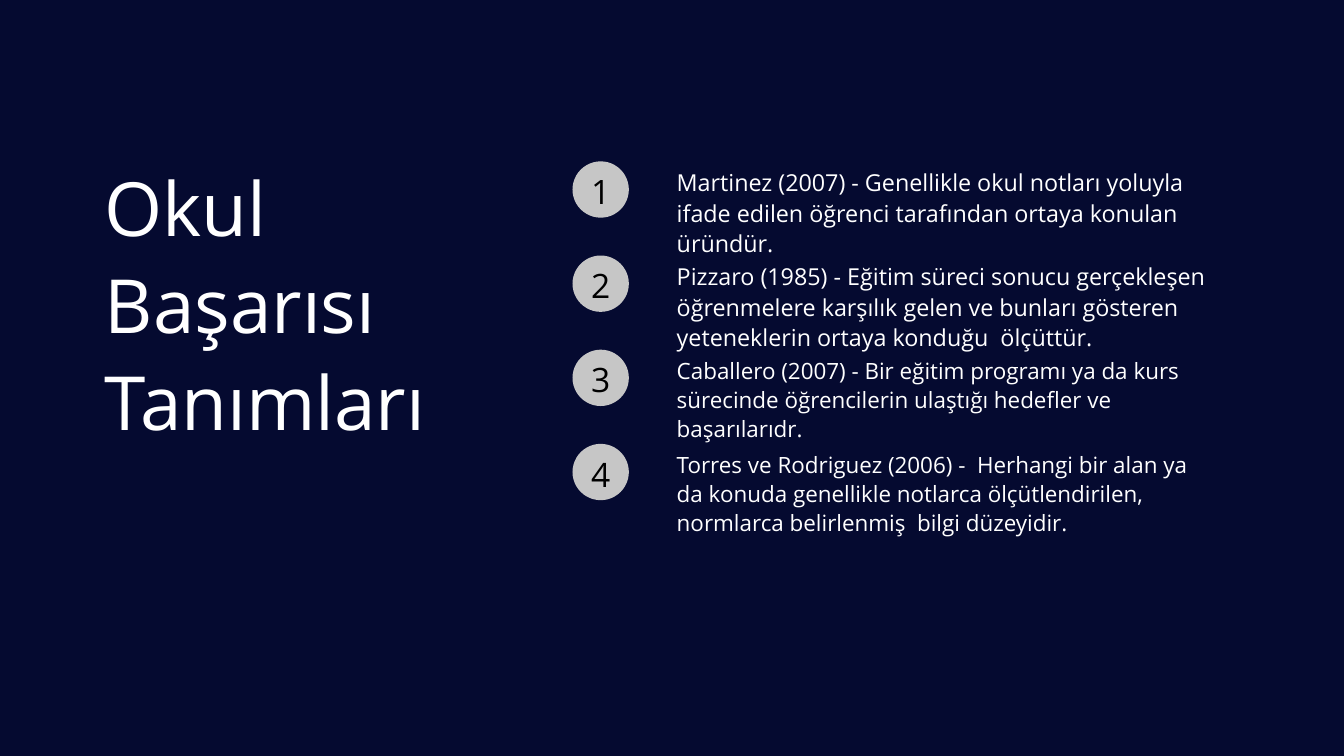
import pptx
import pptx.dml.color
import pptx.enum.shapes
import pptx.enum.text
import pptx.util

Cm = pptx.util.Cm
Pt = pptx.util.Pt
RGBColor = pptx.dml.color.RGBColor
Align = pptx.enum.text.PP_ALIGN
Anchor = pptx.enum.text.MSO_ANCHOR
Fit = pptx.enum.text.MSO_AUTO_SIZE
OVAL = pptx.enum.shapes.MSO_SHAPE.OVAL

NAVY = RGBColor(0x05, 0x0A, 0x30)
GREY = RGBColor(0xC6, 0xC6, 0xC6)
WHITE = RGBColor(0xFF, 0xFF, 0xFF)
BLACK = RGBColor(0x00, 0x00, 0x00)

TITLE = "Okul Başarısı Tanımları"
ITEMS = [
    ("Martinez (2007) - Genellikle okul notları yoluyla ifade edilen "
     "öğrenci tarafından ortaya konulan üründür.", 25),
    ("Pizzaro (1985) - Eğitim süreci sonucu gerçekleşen öğrenmelere "
     "karşılık gelen ve bunları gösteren yeteneklerin ortaya konduğu  "
     "ölçüttür.", 25),
    ("Caballero (2007) - Bir eğitim programı ya da kurs sürecinde "
     "öğrencilerin ulaştığı hedefler ve başarılarıdr.", 24),
    ("Torres ve Rodriguez (2006) -  Herhangi bir alan ya da konuda "
     "genellikle notlarca ölçütlendirilen, normlarca belirlenmiş  bilgi "
     "düzeyidir.", 24),
]
TOP, STEP = 6.1, 3.56
LEAD = 1.3  # line pitch as a share of the font size


class Deck:
    font = "Open Sans"

    def __init__(self, width, height):
        self.prs = pptx.Presentation()
        self.prs.slide_width = Cm(width)
        self.prs.slide_height = Cm(height)

    def page(self, color):
        self.slide = self.prs.slides.add_slide(self.prs.slide_layouts[5])
        fill = self.slide.background.fill
        fill.solid()
        fill.fore_color.rgb = color

    def label(self, shape, text, size, color, align=Align.LEFT,
              anchor=Anchor.TOP):
        """Put styled text into a shape."""
        frame = shape.text_frame
        frame.text = text
        para = frame.paragraphs[0]
        font = para.runs[0].font
        font.color.rgb = color
        style = [
            (frame, {"word_wrap": True, "auto_size": Fit.NONE,
                     "vertical_anchor": anchor, "margin_left": 0,
                     "margin_right": 0, "margin_top": 0,
                     "margin_bottom": 0}),
            (para, {"alignment": align, "line_spacing": Pt(size * LEAD)}),
            (font, {"name": self.font, "size": Pt(size)}),
        ]
        for part, values in style:
            for name, value in values.items():
                setattr(part, name, value)

    def title(self, text, x, y, w, h, size):
        shape = self.slide.shapes.title
        place = {"left": x, "top": y, "width": w, "height": h}
        for name, value in place.items():
            setattr(shape, name, Cm(value))
        self.label(shape, text, size, WHITE)

    def badge(self, text, x, y, side):
        shape = self.slide.shapes.add_shape(
            OVAL, Cm(x), Cm(y), Cm(side), Cm(side))
        shape.shadow.inherit = False
        shape.fill.solid()
        shape.fill.fore_color.rgb = GREY
        shape.line.fill.background()
        self.label(shape, text, 36, BLACK, Align.CENTER, Anchor.MIDDLE)

    def text(self, text, x, y, w, h, size):
        box = self.slide.shapes.add_textbox(Cm(x), Cm(y), Cm(w), Cm(h))
        self.label(box, text, size, WHITE)


def main():
    deck = Deck(50.8, 28.58)
    deck.page(NAVY)
    deck.title(TITLE, 3.96, 5.84, 13.72, 10.87, 80)
    for i, (text, size) in enumerate(ITEMS):
        y = TOP + i * STEP
        deck.badge(str(i + 1), 21.64, y, 2.13)
        deck.text(text, 25.58, y + 0.18, 20.35, 3.4, size)
    deck.prs.save("out.pptx")


if __name__ == "__main__":
    main()
